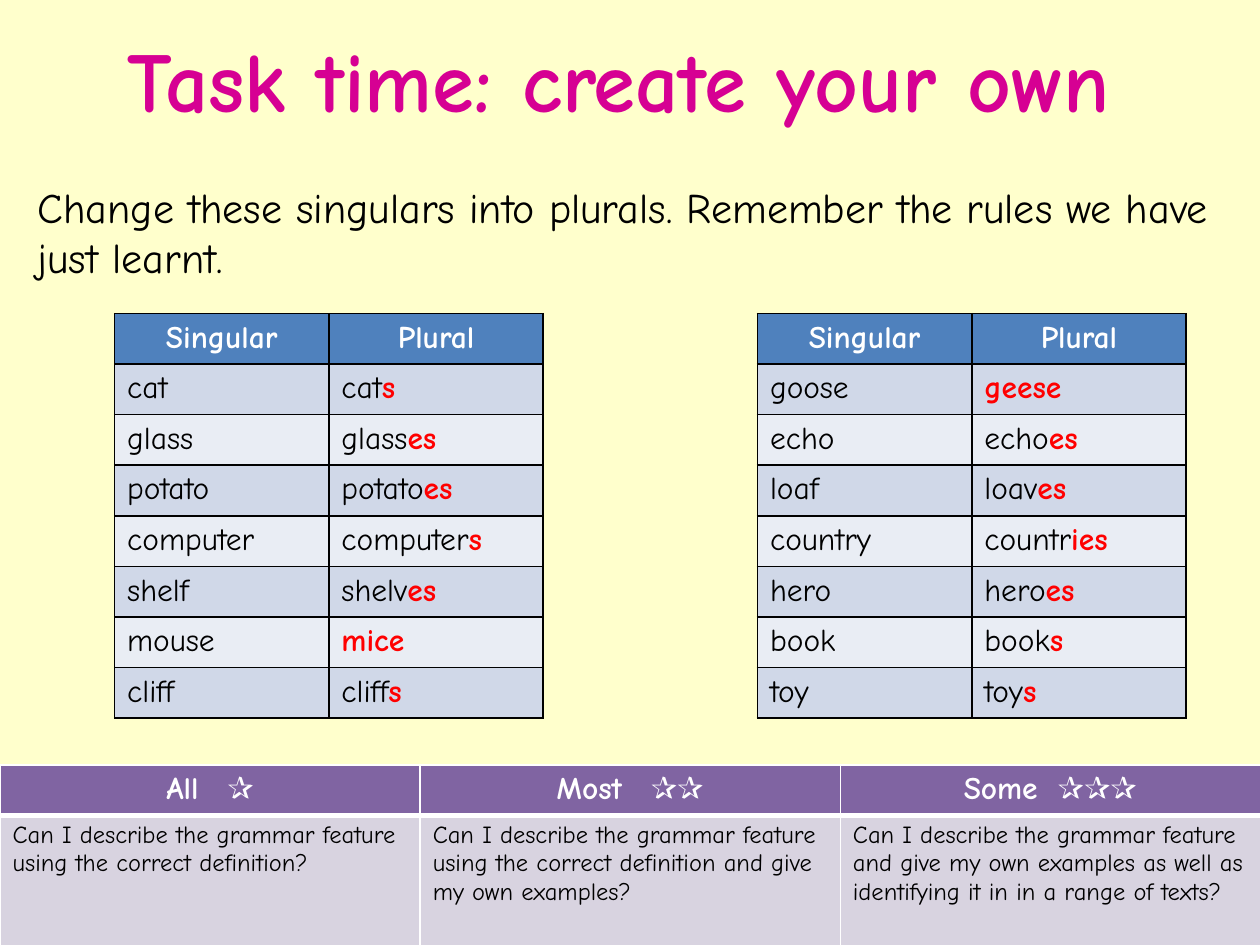
import pptx
import pptx.dml.color
import pptx.enum.text
import pptx.oxml.ns
import pptx.util
from lxml import etree

Cm = pptx.util.Cm
Pt = pptx.util.Pt
RGBColor = pptx.dml.color.RGBColor
ALIGN = pptx.enum.text.PP_ALIGN
ANCHOR = pptx.enum.text.MSO_ANCHOR

FONT = "Comic Neue"
CREAM = RGBColor(0xFF, 0xFF, 0xCC)
MAGENTA = RGBColor(0xD6, 0x00, 0x93)
BLACK = RGBColor(0x00, 0x00, 0x00)
WHITE = RGBColor(0xFF, 0xFF, 0xFF)
RED = RGBColor(0xFF, 0x00, 0x00)
BLUE = RGBColor(0x4F, 0x81, 0xBD)
BLUE_BANDS = (RGBColor(0xD0, 0xD8, 0xE8), RGBColor(0xE9, 0xED, 0xF4))
PURPLE = RGBColor(0x80, 0x64, 0xA2)
LILAC = RGBColor(0xD8, 0xD3, 0xE0)

TITLE = {"size": Pt(48.6), "bold": True, "color": MAGENTA}
BODY = {"size": Pt(24), "bold": False, "color": BLACK}
HEADER = {"size": Pt(18), "bold": True, "color": WHITE}
WORD = {"size": Pt(18), "bold": False, "color": BLACK}
ENDING = {"size": Pt(18), "bold": True, "color": RED}
CRITERION = {"size": Pt(14), "bold": False, "color": BLACK}

# Each entry: singular, unchanged stem, highlighted part of the plural
LEFT_WORDS = [
    ("cat", "cat", "s"), ("glass", "glass", "es"), ("potato", "potato", "es"),
    ("computer", "computer", "s"), ("shelf", "shelv", "es"),
    ("mouse", "", "mice"), ("cliff", "cliff", "s"),
]
RIGHT_WORDS = [
    ("goose", "", "geese"), ("echo", "echo", "es"), ("loaf", "loav", "es"),
    ("country", "countr", "ies"), ("hero", "hero", "es"),
    ("book", "book", "s"), ("toy", "toy", "s"),
]
# Each entry: group, stars, extra gap before the stars in points, criterion
CRITERIA = [
    ("All", "✰", 10,
     "Can I describe the grammar feature using the correct definition?"),
    ("Most", "✰✰", 10,
     "Can I describe the grammar feature using the correct definition "
     "and give my own examples?"),
    ("Some", "✰✰✰", 5,
     "Can I describe the grammar feature and give my own examples as well as "
     "identifying it in in a range of texts?"),
]


def add_run(paragraph, text, text_format):
    run = paragraph.add_run()
    run.text = text
    run.font.name = FONT
    for name, value in text_format.items():
        if name == "color":
            run.font.color.rgb = value
        else:
            setattr(run.font, name, value)
    return run


def set_borders(cell, color, widths):
    """Draw the left, right, top and bottom borders; width 0 means no line."""
    properties = cell._tc.get_or_add_tcPr()
    for side, width in zip("LRTB", widths):
        line = etree.SubElement(properties, pptx.oxml.ns.qn(f"a:ln{side}"))
        line.set("w", str(Pt(width)))
        if width:
            fill = etree.SubElement(line, pptx.oxml.ns.qn("a:solidFill"))
            rgb = etree.SubElement(fill, pptx.oxml.ns.qn("a:srgbClr"))
            rgb.set("val", str(color))
        else:
            etree.SubElement(line, pptx.oxml.ns.qn("a:noFill"))


def fill_cell(cell, runs, fill, border, widths=(1, 1, 1, 1), align=ALIGN.LEFT):
    set_borders(cell, border, widths)
    cell.fill.solid()
    cell.fill.fore_color.rgb = fill
    paragraph = cell.text_frame.paragraphs[0]
    paragraph.alignment = align
    return [add_run(paragraph, text, form) for text, form in runs if text]


def add_table(slide, left, top, column_widths, row_heights):
    table = slide.shapes.add_table(
        len(row_heights), len(column_widths), left, top,
        sum(column_widths), sum(row_heights)).table
    table.horz_banding = False
    for column, width in zip(table.columns, column_widths):
        column.width = width
    for row, height in zip(table.rows, row_heights):
        row.height = height
    return table


def add_title(slide, text):
    title = slide.shapes.title
    title.left, title.top = Cm(-0.38), Cm(0)
    title.width, title.height = Cm(25.7), Cm(3.18)
    frame = title.text_frame
    frame.auto_size = pptx.enum.text.MSO_AUTO_SIZE.NONE
    frame.vertical_anchor = ANCHOR.MIDDLE
    paragraph = frame.paragraphs[0]
    paragraph.alignment = ALIGN.CENTER
    add_run(paragraph, text, TITLE)


def add_instruction(slide, text):
    box = slide.shapes.add_textbox(Cm(0.51), Cm(3.53), Cm(24.82), Cm(2.7))
    box.text_frame.word_wrap = True
    paragraph = box.text_frame.paragraphs[0]
    paragraph.space_before = Pt(4.8)
    add_run(paragraph, text, BODY)


def add_word_table(slide):
    table = add_table(slide, Cm(2.31), Cm(6.32), [Cm(4.32)] * 5,
                      [Cm(0.98)] + [Cm(1.02)] * len(LEFT_WORDS))
    # Two word lists, either side of an empty merged column
    for first_column, words in ((0, LEFT_WORDS), (3, RIGHT_WORDS)):
        for offset, heading in enumerate(("Singular", "Plural")):
            fill_cell(table.cell(0, first_column + offset),
                      [(heading, HEADER)], BLUE, BLACK, align=ALIGN.CENTER)
        for index, (singular, stem, ending) in enumerate(words):
            band = BLUE_BANDS[index % 2]
            fill_cell(table.cell(index + 1, first_column),
                      [(singular, WORD)], band, BLACK)
            fill_cell(table.cell(index + 1, first_column + 1),
                      [(stem, WORD), (ending, ENDING)], band, BLACK)
    for row in range(len(table.rows)):
        gap = table.cell(row, 2)
        set_borders(gap, BLACK, (1, 1, 0, 0))
        gap.fill.background()
    table.cell(0, 2).merge(table.cell(len(LEFT_WORDS), 2))


def add_criteria_table(slide):
    table = add_table(slide, Cm(0), Cm(15.42), [Cm(8.47)] * len(CRITERIA),
                      [Cm(0.98), Cm(2.62)])
    for column, (group, stars, gap, criterion) in enumerate(CRITERIA):
        runs = fill_cell(
            table.cell(0, column),
            [(group, HEADER), (" ", HEADER), (stars, HEADER)],
            PURPLE, WHITE, (1, 1, 1, 3), ALIGN.CENTER)
        # Widen the space with character spacing, in hundredths of a point
        runs[1]._r.get_or_add_rPr().set("spc", str(gap * 100))
        fill_cell(table.cell(1, column), [(criterion, CRITERION)],
                  LILAC, WHITE, (1, 1, 3, 1))


def main():
    presentation = pptx.Presentation()
    presentation.slide_width, presentation.slide_height = Cm(25.4), Cm(19.05)
    slide = presentation.slides.add_slide(presentation.slide_layouts[5])
    slide.background.fill.solid()
    slide.background.fill.fore_color.rgb = CREAM

    add_title(slide, "Task time: create your own")
    add_instruction(slide, "Change these singulars into plurals. "
                           "Remember the rules we have just learnt.")
    add_criteria_table(slide)
    add_word_table(slide)
    presentation.save("out.pptx")


if __name__ == "__main__":
    main()
